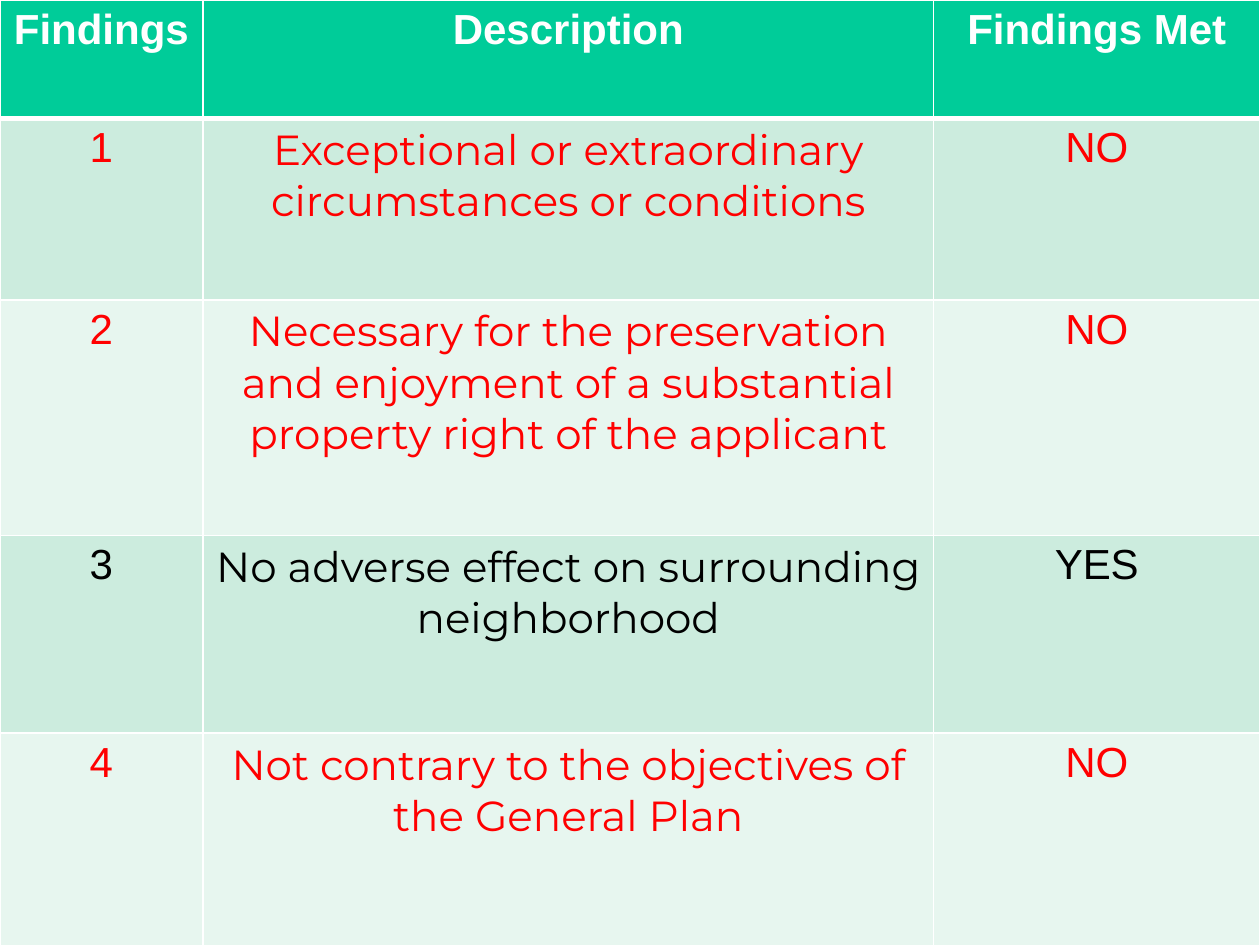
import pptx
import pptx.dml.color
import pptx.enum.text
import pptx.oxml
import pptx.oxml.ns
import pptx.util

Pt = pptx.util.Pt

# Content
HEADERS = ["Findings", "Description", "Findings Met"]
FINDINGS = [
    ("Exceptional or extraordinary circumstances or conditions", "NO"),
    ("Necessary for the preservation and enjoyment of a substantial "
     "property right of the applicant", "NO"),
    ("No adverse effect on surrounding neighborhood", "YES"),
    ("Not contrary to the objectives of the General Plan", "NO"),
]

# Layout and colours
COL_WIDTHS = [115.92, 417.6, 186.48]
ROW_HEIGHTS = [67.68, 103.68, 134.64, 113.04, 126]
HEADER_FILL = "00CC99"
BAND_FILLS = ["CCECDE", "E7F6EF"]
MET_COLORS = {"NO": "FF0000", "YES": "000000"}
WHITE = "FFFFFF"


def rgb(color):
    return pptx.dml.color.RGBColor.from_string(color)


def add_border(cell, side, width):
    cell._tc.get_or_add_tcPr().append(pptx.oxml.parse_xml(
        f'<a:ln{side} {pptx.oxml.ns.nsdecls("a")} w="{Pt(width)}">'
        f'<a:solidFill><a:srgbClr val="{WHITE}"/></a:solidFill></a:ln{side}>'))


def fill_cell(cell, text, fill, color, font, bold, top, bottom):
    # Borders come before the fill in the cell properties
    for side, width in (("L", 1), ("R", 1), ("T", top), ("B", bottom)):
        add_border(cell, side, width)
    cell.fill.solid()
    cell.fill.fore_color.rgb = rgb(fill)
    p = cell.text_frame.paragraphs[0]
    p.text = text
    p.alignment = pptx.enum.text.PP_ALIGN.CENTER
    p.font.name = font
    p.font.size = Pt(24)
    p.font.bold = bold
    p.font.color.rgb = rgb(color)


prs = pptx.Presentation()
prs.slide_width, prs.slide_height = Pt(720), Pt(540)
s = prs.slides.add_slide(prs.slide_layouts[6])

# Table grid
rows = [HEADERS] + [(str(n), *finding) for n, finding in enumerate(FINDINGS, 1)]
table = s.shapes.add_table(len(rows), len(HEADERS), 0, 0,
                           Pt(sum(COL_WIDTHS)), Pt(sum(ROW_HEIGHTS))).table
for column, width in zip(table.columns, COL_WIDTHS):
    column.width = Pt(width)
for row, height in zip(table.rows, ROW_HEIGHTS):
    row.height = Pt(height)

# Cells: heading row, then banded findings coloured by result
for i, texts in enumerate(rows):
    header = i == 0
    fill = HEADER_FILL if header else BAND_FILLS[(i - 1) % 2]
    color = WHITE if header else MET_COLORS[texts[-1]]
    for j, text in enumerate(texts):
        font = "Montserrat" if j == 1 and not header else "Arial"
        fill_cell(table.cell(i, j), text, fill, color, font, header,
                  top=3 if i == 1 else 1, bottom=3 if header else 1)

prs.save("out.pptx")
